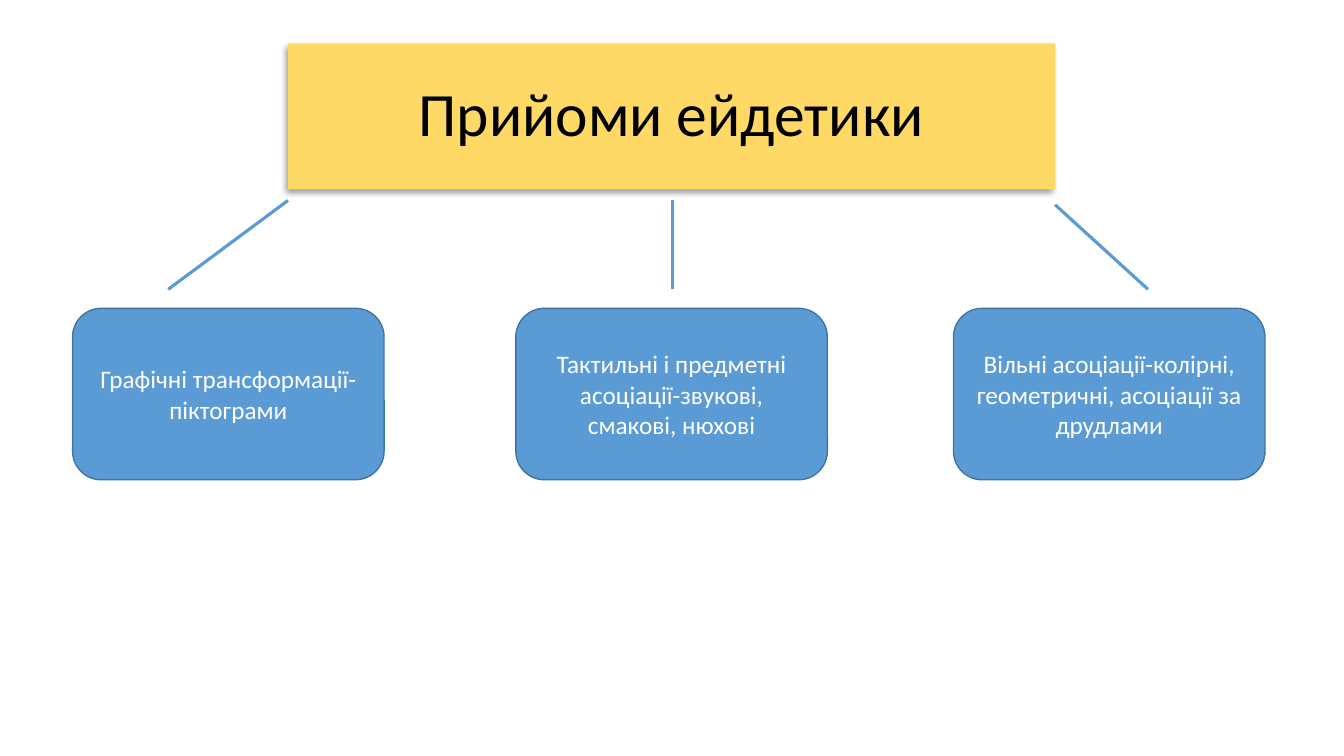
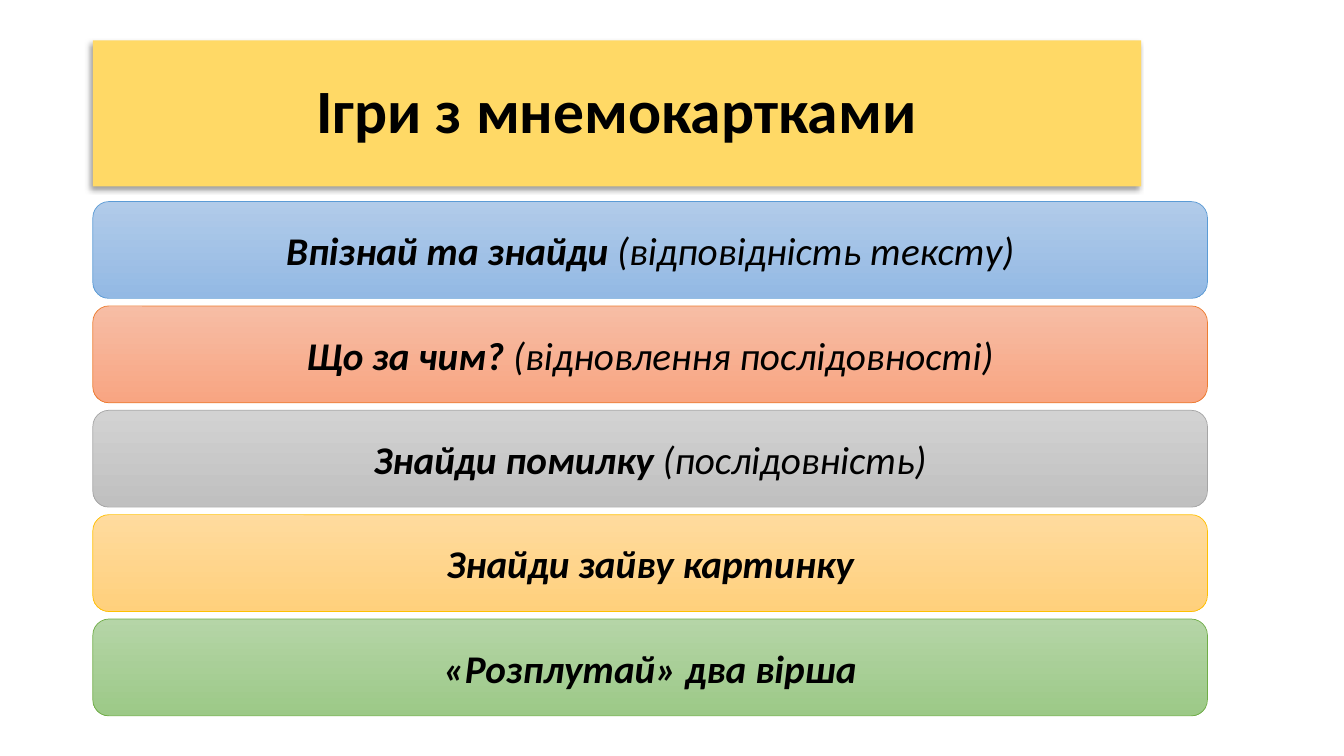
import pptx
import pptx.util
import pptx.dml.color
import pptx.enum.shapes
import pptx.enum.text
import pptx.oxml
import pptx.oxml.ns
import pptx.oxml.xmlchemy

Cm = pptx.util.Cm
Pt = pptx.util.Pt
RGBColor = pptx.dml.color.RGBColor
ROUNDED = pptx.enum.shapes.MSO_SHAPE.ROUNDED_RECTANGLE
STRAIGHT = pptx.enum.shapes.MSO_CONNECTOR.STRAIGHT
CENTER = pptx.enum.text.PP_ALIGN.CENTER
MIDDLE = pptx.enum.text.MSO_ANCHOR.MIDDLE

FONT = "Calibri"
BLACK = RGBColor(0x00, 0x00, 0x00)
WHITE = RGBColor(0xFF, 0xFF, 0xFF)
YELLOW = RGBColor(0xFF, 0xD9, 0x66)
BLUE = RGBColor(0x5B, 0x9B, 0xD5)
DARK_BLUE = RGBColor(0x43, 0x73, 0x9E)
ORANGE = RGBColor(0xED, 0x7D, 0x31)
GRAY = RGBColor(0xA5, 0xA5, 0xA5)
GOLD = RGBColor(0xFF, 0xC0, 0x00)
GREEN = RGBColor(0x70, 0xAD, 0x47)
BLUE_TINTS = RGBColor(0xB1, 0xCB, 0xE9), RGBColor(0x93, 0xB9, 0xE4)
ORANGE_TINTS = RGBColor(0xF7, 0xBD, 0xA5), RGBColor(0xF8, 0xA5, 0x82)
GRAY_TINTS = RGBColor(0xD2, 0xD2, 0xD2), RGBColor(0xC0, 0xC0, 0xC0)
GOLD_TINTS = RGBColor(0xFF, 0xDB, 0x9E), RGBColor(0xFF, 0xD0, 0x7C)
GREEN_TINTS = RGBColor(0xB5, 0xD5, 0xA7), RGBColor(0x9C, 0xC9, 0x87)

TITLE_SHADOW = (
    f'<a:outerShdw {pptx.oxml.ns.nsdecls("a")} blurRad="{Pt(4)}" dist="{Pt(3)}" '
    'dir="8100000" algn="tr" rotWithShape="0">'
    '<a:srgbClr val="000000"><a:alpha val="40000"/></a:srgbClr></a:outerShdw>'
)


def write_runs(shape, runs, size, color, italic=False):
    shape.text_frame.word_wrap = True
    shape.text_frame.vertical_anchor = MIDDLE
    paragraph = shape.text_frame.paragraphs[0]
    paragraph.alignment = CENTER
    for text, bold in runs:
        run = paragraph.add_run()
        run.text = text
        run.font.name = FONT
        run.font.size = Pt(size)
        run.font.bold = bold
        run.font.italic = italic
        run.font.color.rgb = color


def add_titled_slide(text, bold, left, top, width):
    slide = presentation.slides.add_slide(presentation.slide_layouts[5])
    title = slide.shapes.title
    title.left, title.top = Cm(left), Cm(top)
    title.width, title.height = Cm(width), Cm(3.68)
    title.fill.solid()
    title.fill.fore_color.rgb = YELLOW
    title.shadow.inherit = False
    effects = title.element.spPr.find(pptx.oxml.ns.qn("a:effectLst"))
    effects.append(pptx.oxml.parse_xml(TITLE_SHADOW))
    title.text_frame.auto_size = pptx.enum.text.MSO_AUTO_SIZE.NONE
    write_runs(title, [(text, bold)], 44, BLACK)
    title.text_frame.paragraphs[0].line_spacing = 0.9
    return slide


presentation = pptx.Presentation()
presentation.slide_width = Cm(33.87)
presentation.slide_height = Cm(19.05)

slide = add_titled_slide("Прийоми ейдетики", False, 7.26, 1.09, 19.33)

techniques = [
    (1.83, "Графічні трансформації- піктограми"),
    (13, "Тактильні і предметні асоціації-звукові, смакові, нюхові"),
    (24.03, "Вільні асоціації-колірні, геометричні, асоціації за друдлами"),
]
for left, text in techniques:
    card = slide.shapes.add_shape(ROUNDED, Cm(left), Cm(7.77), Cm(7.85), Cm(4.32))
    card.shadow.inherit = False
    card.fill.solid()
    card.fill.fore_color.rgb = BLUE
    card.line.color.rgb = DARK_BLUE
    card.line.width = Pt(1)
    write_runs(card, [(text, False)], 18, WHITE)

branches = [(7.26, 5.05, 4.24), (16.94, 5.05, 16.94), (26.59, 5.16, 28.93)]
for start, top, end in branches:
    branch = slide.shapes.add_connector(STRAIGHT, Cm(start), Cm(top), Cm(end), Cm(7.29))
    branch.line.color.rgb = BLUE
    branch.line.width = Pt(2.25)
    branch.element.spPr.append(pptx.oxml.xmlchemy.OxmlElement("a:effectLst"))

slide = add_titled_slide("Ігри з мнемокартками", True, 2.34, 1.02, 26.42)

games = [
    ([("Впізнай та знайди ", True), ("(відповідність тексту)", False)], BLUE, BLUE_TINTS),
    ([("Що за чим? ", True), ("(відновлення послідовності)", False)], ORANGE, ORANGE_TINTS),
    ([("Знайди помилку ", True), ("(послідовність)", False)], GRAY, GRAY_TINTS),
    ([("Знайди зайву картинку", True)], GOLD, GOLD_TINTS),
    ([("«Розплутай» два вірша", True)], GREEN, GREEN_TINTS),
]
for index, (runs, outline, tints) in enumerate(games):
    bar = slide.shapes.add_shape(
        ROUNDED, Cm(2.34), Cm(5.08 + 2.63 * index), Cm(28.09), Cm(2.44)
    )
    bar.shadow.inherit = False
    bar.fill.gradient()
    bar.fill.gradient_angle = 270
    for stop, tint in zip(bar.fill.gradient_stops, tints):
        stop.color.rgb = tint
    bar.line.color.rgb = outline
    bar.line.width = Pt(0.5)
    write_runs(bar, runs, 28, BLACK, italic=True)

presentation.save("out.pptx")
